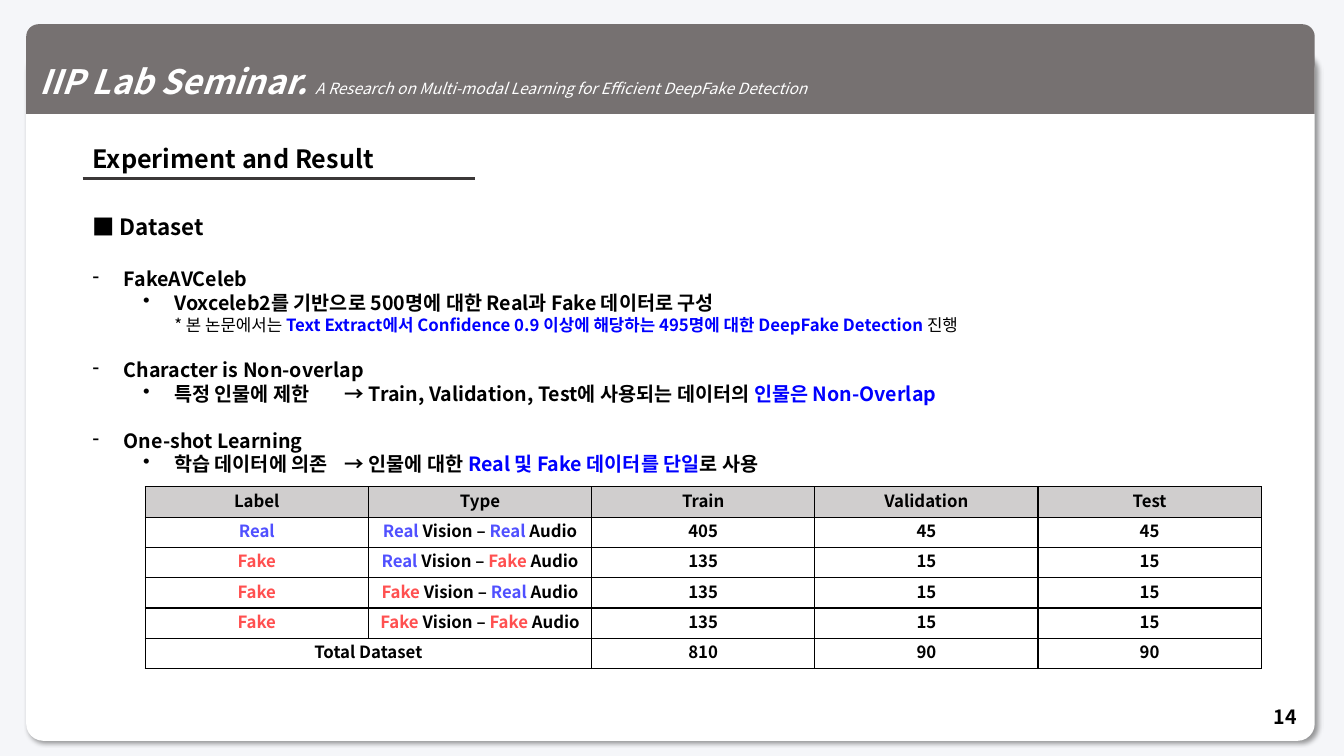
from dataclasses import dataclass

from lxml.etree import SubElement
from pptx import Presentation
from pptx.dml.color import RGBColor
from pptx.enum.shapes import MSO_CONNECTOR as Connector, MSO_SHAPE as Shape
from pptx.enum.text import MSO_ANCHOR as Anchor, PP_ALIGN as Align
from pptx.oxml.ns import qn
from pptx.util import Pt

SCALE = 9144  # 100 px to the inch


@dataclass(frozen=True)
class Theme:
    font: str = "Noto Sans CJK KR"
    page: str = "F5F6F9"
    white: str = "FFFFFF"
    black: str = "000000"
    band: str = "767171"
    rule: str = "3B3838"
    head_row: str = "D0CECE"
    accent: str = "0000FF"
    real: str = "5050FF"
    fake: str = "FF5050"
    banner: int = 24
    title: int = 18
    section: int = 16
    body: int = 14
    small: int = 12
    subtitle: int = 11


THEME = Theme()
BLUE = {"color": THEME.accent}
PLAIN = {"bold": False}

POINTS = [
    ("FakeAVCeleb", [["Voxceleb2를 기반으로 500명에 대한 Real과 Fake 데이터로 구성"]],
     ["* 본 논문에서는 ",
      ("Text Extract에서 Confidence 0.9 이상에 해당하는 495명에 대한 DeepFake Detection",
       {**BLUE, "bold": True}),
      " 진행"]),
    ("Character is Non-overlap",
     [["특정 인물에 제한\t→ Train, Validation, Test에 사용되는 데이터의 ",
       ("인물은 Non-Overlap", BLUE)]], None),
    ("One-shot Learning",
     [["학습 데이터에 의존\t→ 인물에 대한 ", ("Real 및 Fake 데이터를 단일", BLUE), "로 사용"]], None),
]

HEADINGS = ["Label", "Type", "Train", "Validation", "Test"]
SPLITS = [  # vision, audio, train, validation, test
    ("Real", "Real", 405, 45, 45),
    ("Real", "Fake", 135, 15, 15),
    ("Fake", "Real", 135, 15, 15),
    ("Fake", "Fake", 135, 15, 15),
]


def px(length):
    return length * SCALE


def emu(box):
    return [px(length) for length in box]


def rgb(code):
    return RGBColor.from_string(code)


def write(para, *pieces, size=THEME.body, color=THEME.black, bold=True, italic=False,
          align=Align.LEFT, leading=1.2, before=0):
    """Fill a paragraph; a piece is a string or a (string, format overrides) pair."""
    para.alignment = align
    para.line_spacing = Pt(round(size * leading, 1))
    para.space_before = Pt(before)
    for piece in pieces:
        text, changes = (piece, {}) if isinstance(piece, str) else piece
        look = {"size": size, "color": color, "bold": bold, **changes}
        span = para.add_run()
        span.text = text
        font = span.font
        font.size, font.bold, font.italic = Pt(look["size"]), look["bold"], italic
        font.color.rgb = rgb(look["color"])
        font.name = THEME.font
        SubElement(font._element, qn("a:ea"), typeface=THEME.font)


def indent(para, left, hang, bullet=None):
    props = para._p.get_or_add_pPr()
    props.set("marL", str(px(left)))
    props.set("indent", str(px(-hang)))
    if bullet:
        SubElement(props, qn("a:buChar"), char=bullet)


def add_text_frame(page, box, anchor=Anchor.TOP):
    frame = page.shapes.add_textbox(*emu(box)).text_frame
    frame.word_wrap = True
    frame.vertical_anchor = anchor
    return frame


def add_panel(page, kind, box, fill, corners):
    panel = page.shapes.add_shape(kind, *emu(box))
    panel.shadow.inherit = False
    panel.fill.solid()
    panel.fill.fore_color.rgb = rgb(fill)
    panel.line.fill.background()
    for index, corner in enumerate(corners):
        panel.adjustments[index] = corner
    return panel


def draw_card(page, box):
    """White card with a soft shadow, with the seminar banner along its top."""
    left, top, width, height = box
    card = add_panel(page, Shape.ROUNDED_RECTANGLE, (left, top + 28, width, height - 28),
                     THEME.white, [0.025])
    effects = card._element.spPr.find(qn("a:effectLst"))
    shadow = SubElement(effects, qn("a:outerShdw"), blurRad=str(Pt(4)), dist=str(Pt(3)),
                        dir="2700000", algn="tl", rotWithShape="0")
    tint = SubElement(shadow, qn("a:srgbClr"), val=THEME.black)
    SubElement(tint, qn("a:alpha"), val="40000")

    banner = add_panel(page, Shape.ROUND_2_SAME_RECTANGLE, (left, top, width, 89),
                       THEME.band, [0.137, 0])
    frame = banner.text_frame
    frame.word_wrap = True
    frame.vertical_anchor = Anchor.MIDDLE
    write(frame.paragraphs[0], "IIP Lab Seminar. ",
          ("A Research on Multi-modal Learning for Efficient DeepFake Detection",
           {"size": THEME.subtitle, **PLAIN}),
          size=THEME.banner, color=THEME.white, italic=True, leading=1.8)


def draw_title(page, box):
    left, top, _, height = box
    write(add_text_frame(page, box).paragraphs[0], "Experiment and Result", size=THEME.title)
    rule = page.shapes.add_connector(Connector.STRAIGHT, px(left), px(top + height),
                                     px(left + 389), px(top + height))
    rule.line.color.rgb = rgb(THEME.rule)
    rule.line.width = Pt(2.25)
    SubElement(rule._element.spPr, qn("a:effectLst"))


def draw_points(page, box):
    frame = add_text_frame(page, box)
    write(frame.paragraphs[0], "■ Dataset", size=THEME.section)
    gap = THEME.section * 1.2
    for heading, details, note in POINTS:
        para = frame.add_paragraph()
        write(para, heading, before=gap)
        indent(para, 31, 31, "-")
        for detail in details:
            para = frame.add_paragraph()
            para.level = 1
            write(para, *detail)
            indent(para, 81, 31, "•")
        if note:
            para = frame.add_paragraph()
            para.level = 1
            write(para, *note, size=THEME.small, **PLAIN)
            indent(para, 81, 0)
        gap = THEME.body * 1.2


def tinted(label):
    return label, {"color": THEME.real if label == "Real" else THEME.fake}


def table_rows():
    """Rows of cells, each cell a list of text pieces; the last row holds the sums."""
    rows = [[[heading] for heading in HEADINGS]]
    for vision, audio, *counts in SPLITS:
        label = "Real" if vision == audio == "Real" else "Fake"
        kind = [tinted(vision), " Vision – ", tinted(audio), " Audio"]
        rows.append([[tinted(label)], kind] + [[str(count)] for count in counts])
    totals = [sum(column) for column in list(zip(*SPLITS))[2:]]
    rows.append([["Total Dataset"], []] + [[str(total)] for total in totals])
    return rows


def outline(cell):
    props = cell._tc.get_or_add_tcPr()
    for side in ("lnL", "lnR", "lnT", "lnB"):
        edge = SubElement(props, qn(f"a:{side}"), w=str(Pt(1)))
        SubElement(SubElement(edge, qn("a:solidFill")), qn("a:srgbClr"), val=THEME.black)


def draw_table(page, box):
    rows = table_rows()
    table = page.shapes.add_table(len(rows), len(HEADINGS), *emu(box)).table
    table.first_row = table.horz_banding = False
    for row_index, row in enumerate(rows):
        for column_index, pieces in enumerate(row):
            cell = table.cell(row_index, column_index)
            cell.vertical_anchor = Anchor.MIDDLE
            outline(cell)
            if row_index == 0:
                cell.fill.solid()
                cell.fill.fore_color.rgb = rgb(THEME.head_row)
            else:
                cell.fill.background()
            write(cell.text_frame.paragraphs[0], *pieces, size=THEME.small,
                  align=Align.CENTER)
    last = len(rows) - 1
    table.cell(last, 0).merge(table.cell(last, 1))


def draw_page_number(page, box):
    write(add_text_frame(page, box, Anchor.MIDDLE).paragraphs[0], "14", align=Align.RIGHT)


def main():
    deck = Presentation()
    deck.slide_width, deck.slide_height = px(1333), px(750)
    page = deck.slides.add_slide(deck.slide_layouts[6])
    page.background.fill.solid()
    page.background.fill.fore_color.rgb = rgb(THEME.page)
    draw_card(page, (26, 24, 1278, 711))
    draw_title(page, (82, 137, 1169, 40))
    draw_page_number(page, (996, 691, 300, 40))
    draw_points(page, (82, 207, 1169, 276))
    draw_table(page, (144, 483, 1107, 180))
    deck.save("out.pptx")


if __name__ == "__main__":
    main()
